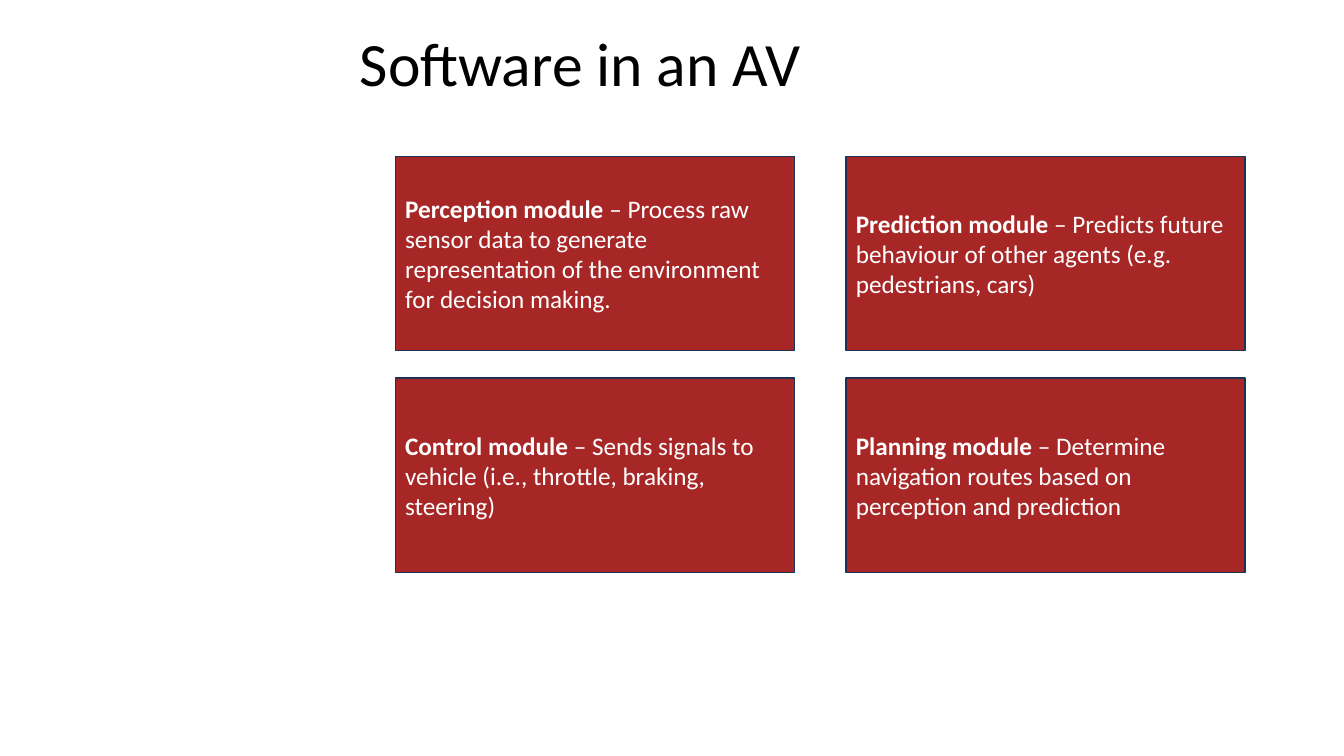
from pptx import Presentation
from pptx.dml.color import RGBColor
from pptx.enum.shapes import MSO_SHAPE
from pptx.enum.text import MSO_ANCHOR, PP_ALIGN
from pptx.util import Inches, Pt

BLACK = RGBColor(0x00, 0x00, 0x00)
WHITE = RGBColor(0xFF, 0xFF, 0xFF)
BRICK_RED = RGBColor(0xA7, 0x27, 0x27)
NAVY = RGBColor(0x1E, 0x32, 0x56)

GRID_LEFT, GRID_TOP = 3.92, 1.55
COLUMN_STEP, ROW_STEP = 4.47, 2.2
CARD_WIDTH, CARD_HEIGHT = 3.96, 1.93

MODULE_ROWS = [
    [
        ("Perception module ", "– Process raw sensor data to generate "
         "representation of the environment for decision making."),
        ("Prediction module ", "– Predicts future behaviour of other agents "
         "(e.g. pedestrians, cars)"),
    ],
    [
        ("Control module ", "– Sends signals to vehicle (i.e., throttle, "
         "braking, steering)"),
        ("Planning module ", "– Determine navigation routes based on "
         "perception and prediction"),
    ],
]


def add_run(paragraph, text, size, color, bold=False):
    run = paragraph.add_run()
    run.text = text
    font_format = {"name": "Calibri", "size": Pt(size), "bold": bold}
    for attribute, value in font_format.items():
        setattr(run.font, attribute, value)
    run.font.color.rgb = color


def add_title(slide, text):
    text_box = slide.shapes.add_textbox(
        Inches(3.47), Inches(0.28), Inches(8.71), Inches(1.45))
    text_box.text_frame.word_wrap = True
    paragraph = text_box.text_frame.paragraphs[0]
    paragraph.line_spacing = 0.9
    add_run(paragraph, text, 44, BLACK)


def add_module_card(slide, left, top, name, description):
    shape = slide.shapes.add_shape(
        MSO_SHAPE.RECTANGLE, Inches(left), Inches(top),
        Inches(CARD_WIDTH), Inches(CARD_HEIGHT))
    shape.shadow.inherit = False
    shape.fill.solid()
    shape.fill.fore_color.rgb = BRICK_RED
    shape.line.color.rgb = NAVY
    shape.line.width = Pt(1)
    shape.text_frame.word_wrap = True
    shape.text_frame.vertical_anchor = MSO_ANCHOR.MIDDLE
    paragraph = shape.text_frame.paragraphs[0]
    paragraph.alignment = PP_ALIGN.LEFT
    add_run(paragraph, name, 18, WHITE, bold=True)
    add_run(paragraph, description, 18, WHITE)


def main():
    presentation = Presentation()
    presentation.slide_width = Inches(13.33)
    presentation.slide_height = Inches(7.5)
    slide = presentation.slides.add_slide(presentation.slide_layouts[6])
    add_title(slide, "Software in an AV")
    for row, modules in enumerate(MODULE_ROWS):
        for column, (name, description) in enumerate(modules):
            add_module_card(slide, GRID_LEFT + column * COLUMN_STEP,
                            GRID_TOP + row * ROW_STEP, name, description)
    presentation.save("out.pptx")


if __name__ == "__main__":
    main()
